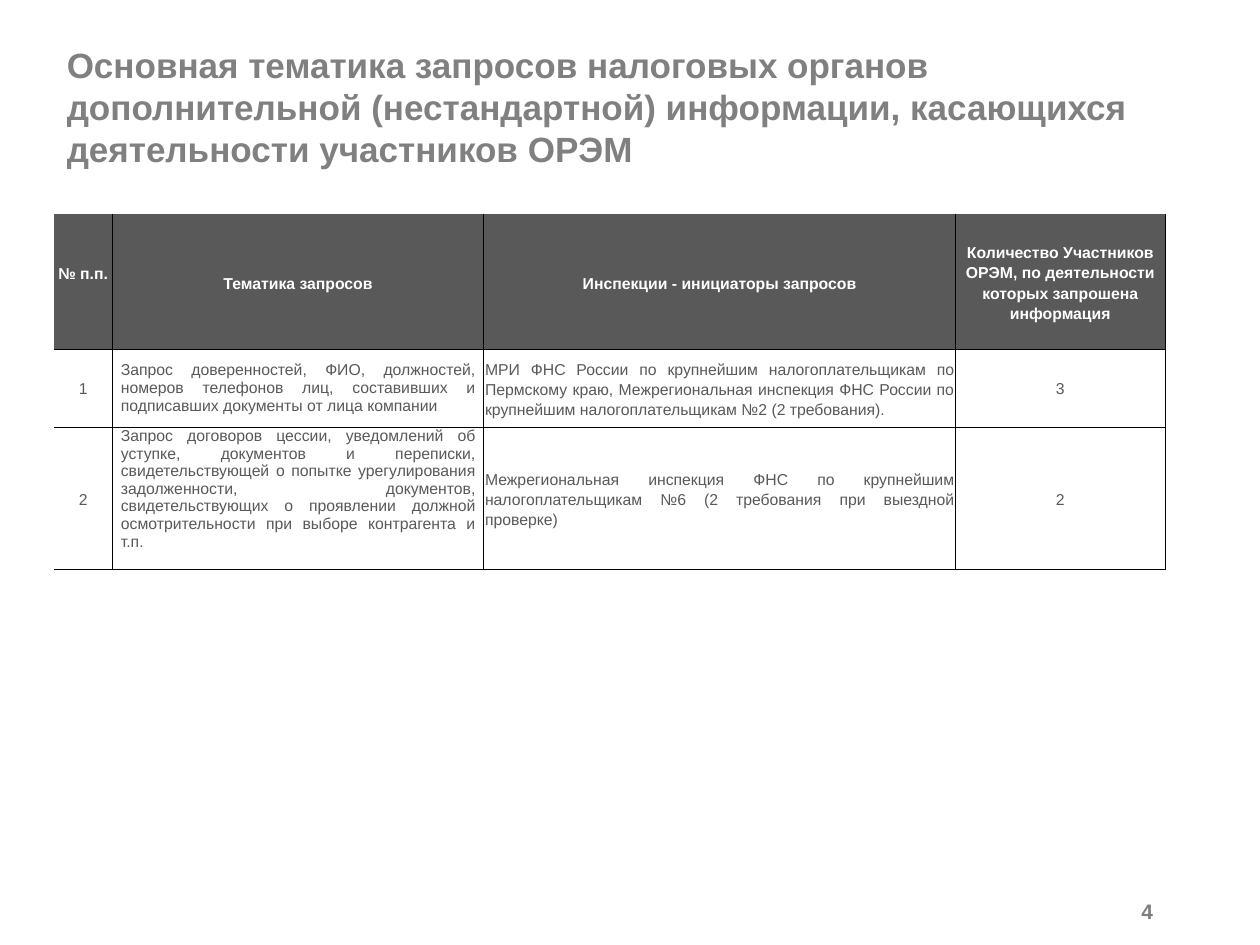
import pptx
import pptx.util
import pptx.dml.color
import pptx.enum.text
import pptx.oxml

Inches = pptx.util.Inches
Pt = pptx.util.Pt
ALIGN = pptx.enum.text.PP_ALIGN
ANCHOR = pptx.enum.text.MSO_ANCHOR

SLIDE_WIDTH, SLIDE_HEIGHT = 10, 7.5
LEFT, CONTENT_WIDTH = 0.43, 8.82
COLUMNS = (0.46, 2.95, 3.74, 1.67)
ROWS = (1.07, 0.62, 1.13)
TIGHT = (0.01, 0.01, 0.01, 0)
ROOMY = (0.07, 0, 0.07, 0)
DARK, WHITE = "595959", "FFFFFF"
EDGES = ("lnL", "lnR", "lnT", "lnB")

TITLE = ("Основная тематика запросов налоговых органов дополнительной "
         "(нестандартной) информации, касающихся деятельности участников ОРЭМ")
HEADINGS = ("№ п.п.", "Тематика запросов", "Инспекции - инициаторы запросов",
            "Количество Участников ОРЭМ, по деятельности которых запрошена информация")
REQUESTS = (
    ("1",
     "Запрос доверенностей, ФИО, должностей, номеров телефонов лиц, "
     "составивших и подписавших документы от лица компании",
     "МРИ ФНС России по крупнейшим налогоплательщикам по Пермскому краю, "
     "Межрегиональная инспекция ФНС России по крупнейшим "
     "налогоплательщикам №2 (2 требования).",
     "3"),
    ("2",
     "Запрос договоров цессии, уведомлений об уступке, документов и переписки, "
     "свидетельствующей о попытке урегулирования задолженности, документов, "
     "свидетельствующих о проявлении должной осмотрительности при выборе "
     "контрагента и т.п.",
     "Межрегиональная инспекция ФНС по крупнейшим налогоплательщикам №6 "
     "(2 требования при выездной проверке)",
     "2"),
)


def colour(value):
    return pptx.dml.color.RGBColor.from_string(value)


def set_all(target, values):
    for attribute, value in values.items():
        setattr(target, attribute, value)


def write(frame, text, size, hue, bold, align, spacing=1.0):
    frame.text = text
    paragraph = frame.paragraphs[0]
    set_all(paragraph, {"alignment": align, "line_spacing": spacing})
    font = paragraph.runs[0].font
    set_all(font, {"name": "Arial", "size": Pt(size), "bold": bold})
    font.color.rgb = colour(hue)


def place(shape, left, top, width, height):
    set_all(shape, {"left": Inches(left), "top": Inches(top),
                    "width": Inches(width), "height": Inches(height)})


def add_title(slide):
    title = slide.shapes.title
    place(title, LEFT, 0.3, CONTENT_WIDTH, 1.09)
    set_all(title.text_frame, {"word_wrap": True, "vertical_anchor": ANCHOR.MIDDLE,
                               "auto_size": pptx.enum.text.MSO_AUTO_SIZE.NONE})
    write(title.text_frame, TITLE, 20, "808080", True, ALIGN.LEFT)


def add_page_number(slide):
    width = 1.1
    number = slide.shapes.add_textbox(Inches(LEFT + CONTENT_WIDTH - width), Inches(7.06),
                                      Inches(width), Inches(0.34))
    set_all(number.text_frame, {"word_wrap": True, "vertical_anchor": ANCHOR.MIDDLE})
    write(number.text_frame, "4", 12, "7F7F7F", True, ALIGN.RIGHT)


def set_borders(cell, hidden):
    properties = cell._tc.get_or_add_tcPr()
    for index, edge in enumerate(EDGES):
        paint = ("<a:noFill/>" if edge in hidden else
                 '<a:solidFill><a:srgbClr val="000000"/></a:solidFill>')
        line = pptx.oxml.parse_xml(
            f'<a:{edge} xmlns:a="http://schemas.openxmlformats.org/drawingml/2006/main" '
            f'w="{Pt(0.5)}">{paint}</a:{edge}>')
        properties.insert(index, line)


def format_cell(cell, text, row, column):
    heading = row == 0
    margins = TIGHT if heading or column == 2 else ROOMY
    sides = ("margin_left", "margin_top", "margin_right", "margin_bottom")
    set_all(cell, {side: Inches(gap) for side, gap in zip(sides, margins)})
    cell.vertical_anchor = ANCHOR.MIDDLE
    cell.fill.solid()
    cell.fill.fore_color.rgb = colour(DARK if heading else WHITE)
    justified = not heading and column in (1, 2)
    single = (heading and column == 0) or (not heading and column == 1)
    write(cell.text_frame, text, 9, WHITE if heading else DARK, heading,
          ALIGN.JUSTIFY if justified else ALIGN.CENTER, 1.0 if single else 1.15)
    hidden = {edge for edge, outer in (("lnL", column == 0), ("lnT", heading)) if outer}
    set_borders(cell, hidden)


def add_requests(slide):
    content = (HEADINGS,) + REQUESTS
    requests = slide.shapes.add_table(len(ROWS), len(COLUMNS), Inches(LEFT), Inches(1.7),
                                      Inches(CONTENT_WIDTH), Inches(sum(ROWS))).table
    set_all(requests, {"first_row": False, "horz_banding": False})
    for column, width in zip(requests.columns, COLUMNS):
        column.width = Inches(width)
    for row, height in zip(requests.rows, ROWS):
        row.height = Inches(height)
    for row, texts in enumerate(content):
        for column, text in enumerate(texts):
            format_cell(requests.cell(row, column), text, row, column)
    requests.cell(0, 0).margin_bottom = Inches(0.13)
    requests.cell(len(REQUESTS), 1).vertical_anchor = ANCHOR.TOP


def main():
    deck = pptx.Presentation()
    set_all(deck, {"slide_width": Inches(SLIDE_WIDTH), "slide_height": Inches(SLIDE_HEIGHT)})
    slide = deck.slides.add_slide(deck.slide_layouts[5])
    add_title(slide)
    add_requests(slide)
    add_page_number(slide)
    deck.save("out.pptx")


if __name__ == "__main__":
    main()
